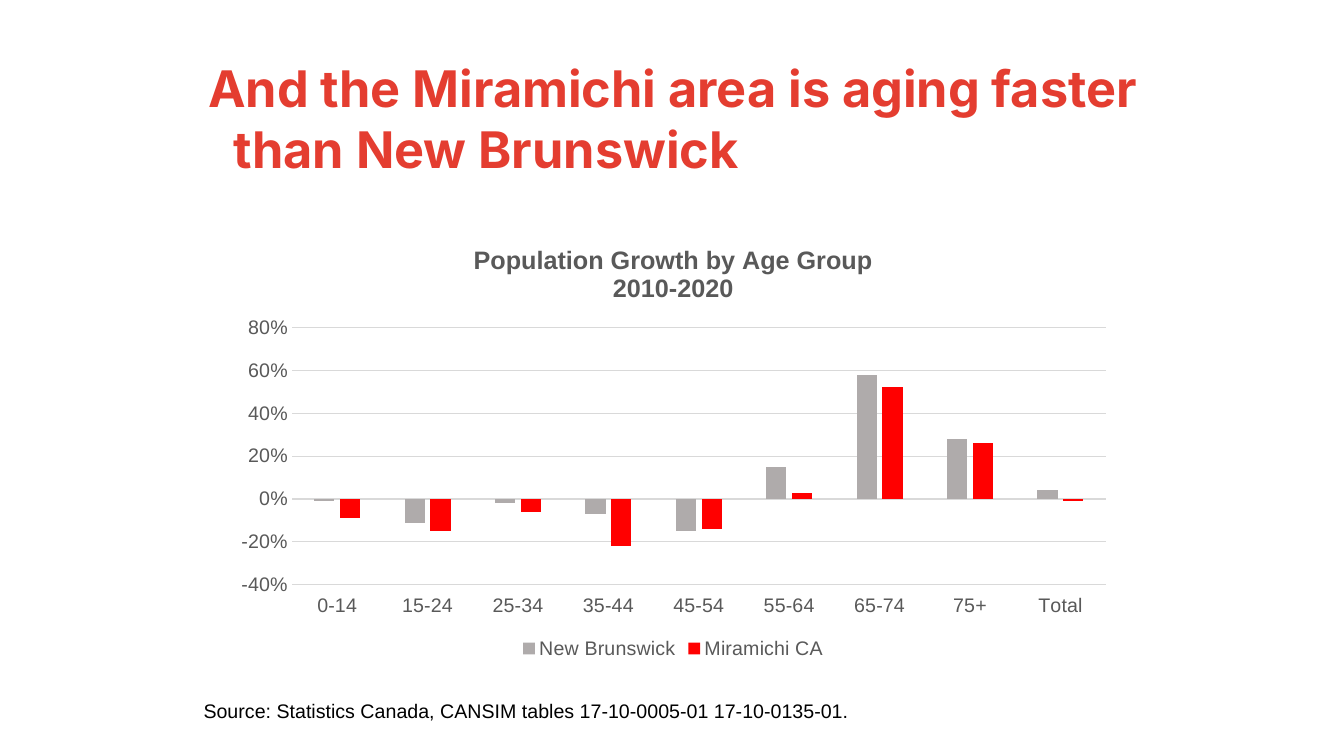
from lxml import etree
from pptx import Presentation
from pptx import util as u
from pptx.chart.data import CategoryChartData
from pptx.dml.color import RGBColor
from pptx.enum import chart as ch
from pptx.oxml.ns import qn

RED = RGBColor(0xE4, 0x3D, 0x30)
BLACK = RGBColor(0, 0, 0)
TEXT = RGBColor(0x59, 0x59, 0x59)
GRID = RGBColor(0xD9, 0xD9, 0xD9)
GRAY = RGBColor(0xAF, 0xAB, 0xAB)
BRIGHT = RGBColor(0xFF, 0, 0)


def style(font, size, color, name="Arial", bold=False):
    font.size = u.Pt(size)
    font.color.rgb = color
    font.name = name
    font.bold = bold


def add_text(words, left, top, width, height):
    box = slide.shapes.add_textbox(u.Cm(left), u.Cm(top), u.Cm(width), u.Cm(height))
    box.text_frame.word_wrap = True
    par = box.text_frame.paragraphs[0]
    par.text = words
    return par


deck = Presentation()
deck.slide_width = u.Cm(33.87)
deck.slide_height = u.Cm(19.05)
slide = deck.slides.add_slide(deck.slide_layouts[6])

title = add_text("And the Miramichi area is aging faster than New Brunswick",
                 4.37, 1.32, 24.66, 3.94)
props = title._p.get_or_add_pPr()
props.set("marL", str(u.Cm(1.27)))
props.set("indent", str(u.Cm(-0.64)))
style(title.runs[0].font, 36, RED, "Inter", True)

source = add_text("Source: Statistics Canada, CANSIM tables 17-10-0005-01 17-10-0135-01.",
                  4.88, 17.48, 23.77, 0.86)
style(source.runs[0].font, 14, BLACK)

data = CategoryChartData(number_format="0%")
data.categories = ["0-14", "15-24", "25-34", "35-44", "45-54",
                   "55-64", "65-74", "75+", "Total"]
data.add_series("New Brunswick",
                [-0.01, -0.11, -0.02, -0.07, -0.15, 0.15, 0.58, 0.28, 0.04])
data.add_series("Miramichi CA",
                [-0.09, -0.15, -0.06, -0.22, -0.14, 0.03, 0.52, 0.26, -0.01])
chart = slide.shapes.add_chart(ch.XL_CHART_TYPE.COLUMN_CLUSTERED, u.Cm(5.61), u.Cm(5.72),
                               u.Cm(22.71), u.Cm(11), data).chart
style(chart.font, 10, BLACK)

chart.has_title = True
head = chart.chart_title.text_frame
head.text = "Population Growth by Age Group\n2010-2020"
for par in head.paragraphs:
    style(par.runs[0].font, 18, TEXT, bold=True)
chart.chart_title.include_in_layout = False

chart.has_legend = True
chart.legend.position = ch.XL_LEGEND_POSITION.BOTTOM
chart.legend.include_in_layout = False
style(chart.legend.font, 14, TEXT)

plot = chart.plots[0]
plot.vary_by_categories = False
plot.gap_width = 219
plot.overlap = -27
for bars, color in zip(plot.series, (GRAY, BRIGHT)):
    bars.invert_if_negative = False
    bars.format.fill.solid()
    bars.format.fill.fore_color.rgb = color

ages, growth = chart.category_axis, chart.value_axis
for axis in (ages, growth):
    axis.major_tick_mark = ch.XL_TICK_MARK.NONE
    axis.minor_tick_mark = ch.XL_TICK_MARK.NONE
    style(axis.tick_labels.font, 14, TEXT)
ages.tick_label_position = ch.XL_TICK_LABEL_POSITION.LOW
growth.minimum_scale = -0.4
growth.maximum_scale = 0.8
growth.major_unit = 0.2
growth.tick_labels.number_format = "0%"
growth.tick_labels.number_format_is_linked = False
growth.format.line.fill.background()
for line in (ages.format.line, growth.major_gridlines.format.line):
    line.color.rgb = GRID
    line.width = u.Pt(0.75)

area = chart._chartSpace.chart.plotArea
for old in area.findall(qn("c:layout")):
    area.remove(old)
layout = etree.Element(qn("c:layout"))
area.insert(0, layout)
manual = etree.SubElement(layout, qn("c:manualLayout"))
for tag, val in (("layoutTarget", "inner"), ("xMode", "edge"), ("yMode", "edge"),
                 ("x", "0.077"), ("y", "0.23"), ("w", "0.903"), ("h", "0.59")):
    etree.SubElement(manual, qn("c:" + tag)).set("val", val)

deck.save("out.pptx")
